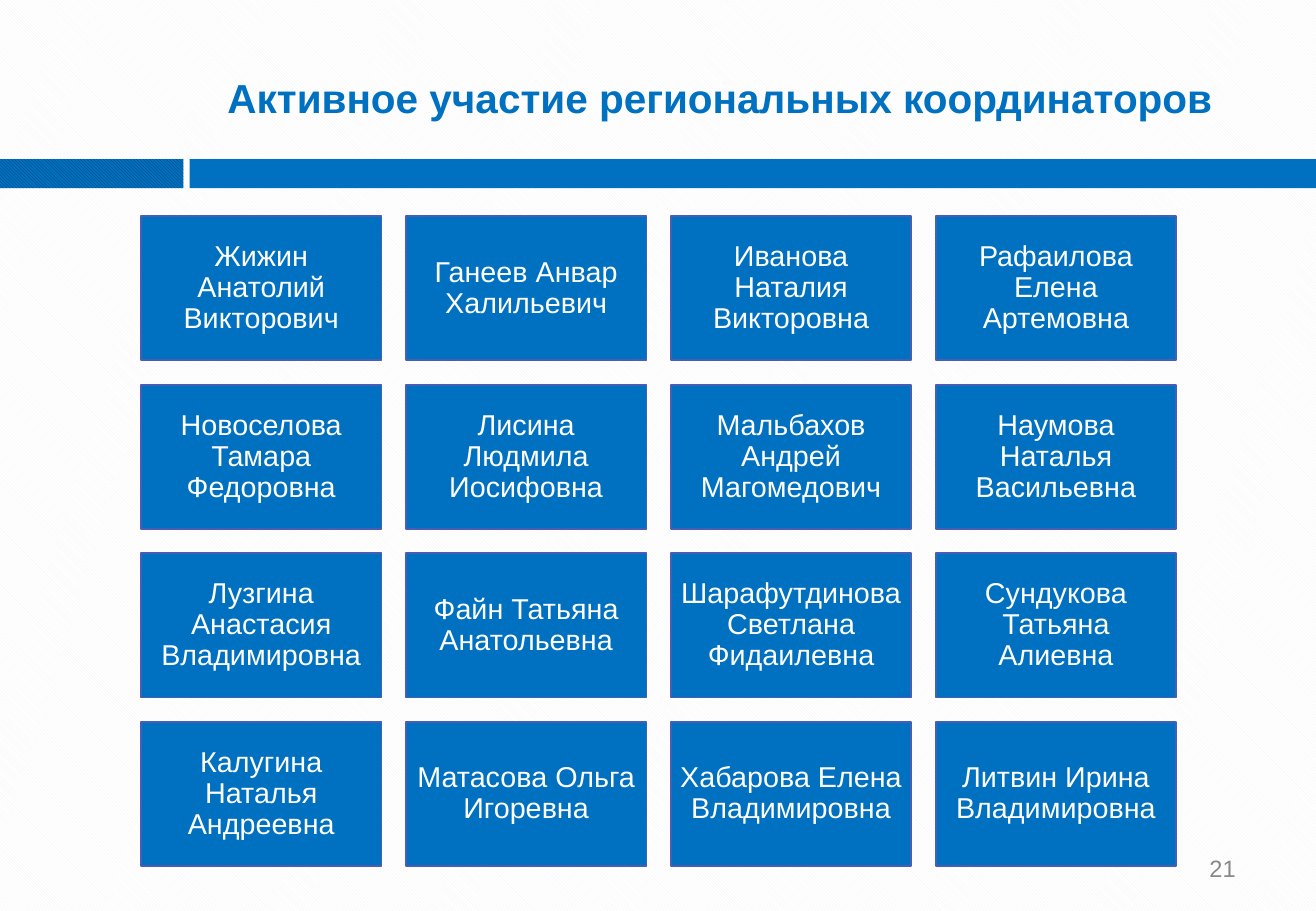
from dataclasses import dataclass

from pptx import Presentation
from pptx.dml.color import RGBColor
from pptx.enum.dml import MSO_PATTERN
from pptx.enum.shapes import MSO_SHAPE
from pptx.enum.text import MSO_ANCHOR, PP_ALIGN
from pptx.util import Inches, Pt

RECTANGLE = MSO_SHAPE.RECTANGLE
DIAGONAL = MSO_PATTERN.LIGHT_DOWNWARD_DIAGONAL
MIDDLE = MSO_ANCHOR.MIDDLE
CENTER, RIGHT = PP_ALIGN.CENTER, PP_ALIGN.RIGHT
TITLE_ONLY = 5


@dataclass(frozen=True)
class Theme:
    font: str = "Arial"
    blue: RGBColor = RGBColor(0x00, 0x70, 0xC0)
    dark_blue: RGBColor = RGBColor(0x07, 0x3C, 0x65)
    outline: RGBColor = RGBColor(0x47, 0x5D, 0xB6)
    white: RGBColor = RGBColor(0xFF, 0xFF, 0xFF)
    pale_gray: RGBColor = RGBColor(0xF2, 0xF2, 0xF2)
    gray: RGBColor = RGBColor(0x89, 0x89, 0x89)
    title_size: Pt = Pt(24)
    card_size: Pt = Pt(17)
    number_size: Pt = Pt(14)


THEME = Theme()

COORDINATORS = [
    ["Жижин Анатолий Викторович", "Ганеев Анвар Халильевич",
     "Иванова Наталия Викторовна", "Рафаилова Елена Артемовна"],
    ["Новоселова Тамара Федоровна", "Лисина Людмила Иосифовна",
     "Мальбахов Андрей Магомедович", "Наумова Наталья Васильевна"],
    ["Лузгина Анастасия Владимировна", "Файн Татьяна Анатольевна",
     "Шарафутдинова Светлана Фидаилевна", "Сундукова Татьяна Алиевна"],
    ["Калугина Наталья Андреевна", "Матасова Ольга Игоревна",
     "Хабарова Елена Владимировна", "Литвин Ирина Владимировна"],
]


def write_text(shape, text, size, color, align, insets, bold=False):
    frame = shape.text_frame
    frame.word_wrap = True
    frame.vertical_anchor = MIDDLE
    frame.margin_left = frame.margin_right = Inches(insets[0])
    frame.margin_top = frame.margin_bottom = Inches(insets[1])
    frame.text = text
    paragraph = frame.paragraphs[0]
    paragraph.alignment = align
    paragraph.font.name = THEME.font
    paragraph.font.size = size
    paragraph.font.bold = bold
    paragraph.font.color.rgb = color
    return paragraph


def add_rectangle(slide, left, top, width, height):
    shape = slide.shapes.add_shape(
        RECTANGLE, Inches(left), Inches(top), Inches(width), Inches(height))
    shape.shadow.inherit = False
    shape.fill.solid()
    shape.fill.fore_color.rgb = THEME.blue
    shape.line.fill.background()
    return shape


def fill_diagonal(fill, foreground, background):
    fill.patterned()
    fill.pattern = DIAGONAL
    fill.fore_color.rgb = foreground
    fill.back_color.rgb = background


def place_title(slide, text, left, top, width, height):
    title = slide.shapes.title
    title.left, title.top = Inches(left), Inches(top)
    title.width, title.height = Inches(width), Inches(height)
    write_text(title, text, THEME.title_size, THEME.blue, CENTER, (0.12, 0.06), bold=True)


def add_divider(slide, left, top, width, height):
    hatched_width, gap = 1.53, 0.05
    hatched = add_rectangle(slide, left, top, hatched_width, height)
    fill_diagonal(hatched.fill, THEME.dark_blue, THEME.blue)
    offset = hatched_width + gap
    add_rectangle(slide, left + offset, top, width - offset, height)


def add_cards(slide, rows, left, top, width, height):
    gap = 0.2
    card_width = (width + gap) / len(rows[0]) - gap
    card_height = (height + gap) / len(rows) - gap
    for row, names in enumerate(rows):
        for column, name in enumerate(names):
            card = add_rectangle(
                slide, left + column * (card_width + gap),
                top + row * (card_height + gap), card_width, card_height)
            card.line.color.rgb = THEME.outline
            card.line.width = Pt(1)
            paragraph = write_text(
                card, name, THEME.card_size, THEME.white, CENTER, (0.07, 0.07))
            paragraph.line_spacing = 0.9


def add_page_number(slide, number, left, top, width, height):
    box = slide.shapes.add_textbox(
        Inches(left), Inches(top), Inches(width), Inches(height))
    write_text(box, number, THEME.number_size, THEME.gray, RIGHT, (0.12, 0.06))


def main():
    presentation = Presentation()
    presentation.slide_width = Inches(10.83)
    presentation.slide_height = Inches(7.5)
    slide = presentation.slides.add_slide(presentation.slide_layouts[TITLE_ONLY])
    fill_diagonal(slide.background.fill, THEME.pale_gray, THEME.white)

    # Heading and divider
    add_divider(slide, -0.02, 1.31, 10.86, 0.24)
    place_title(slide, "Активное участие региональных координаторов", 1.56, 0.3, 8.73, 1.01)

    # Page number and coordinator cards
    add_page_number(slide, "21", 7.76, 6.95, 2.53, 0.4)
    add_cards(slide, COORDINATORS, 1.16, 1.78, 8.52, 5.35)

    presentation.save("out.pptx")


if __name__ == "__main__":
    main()
